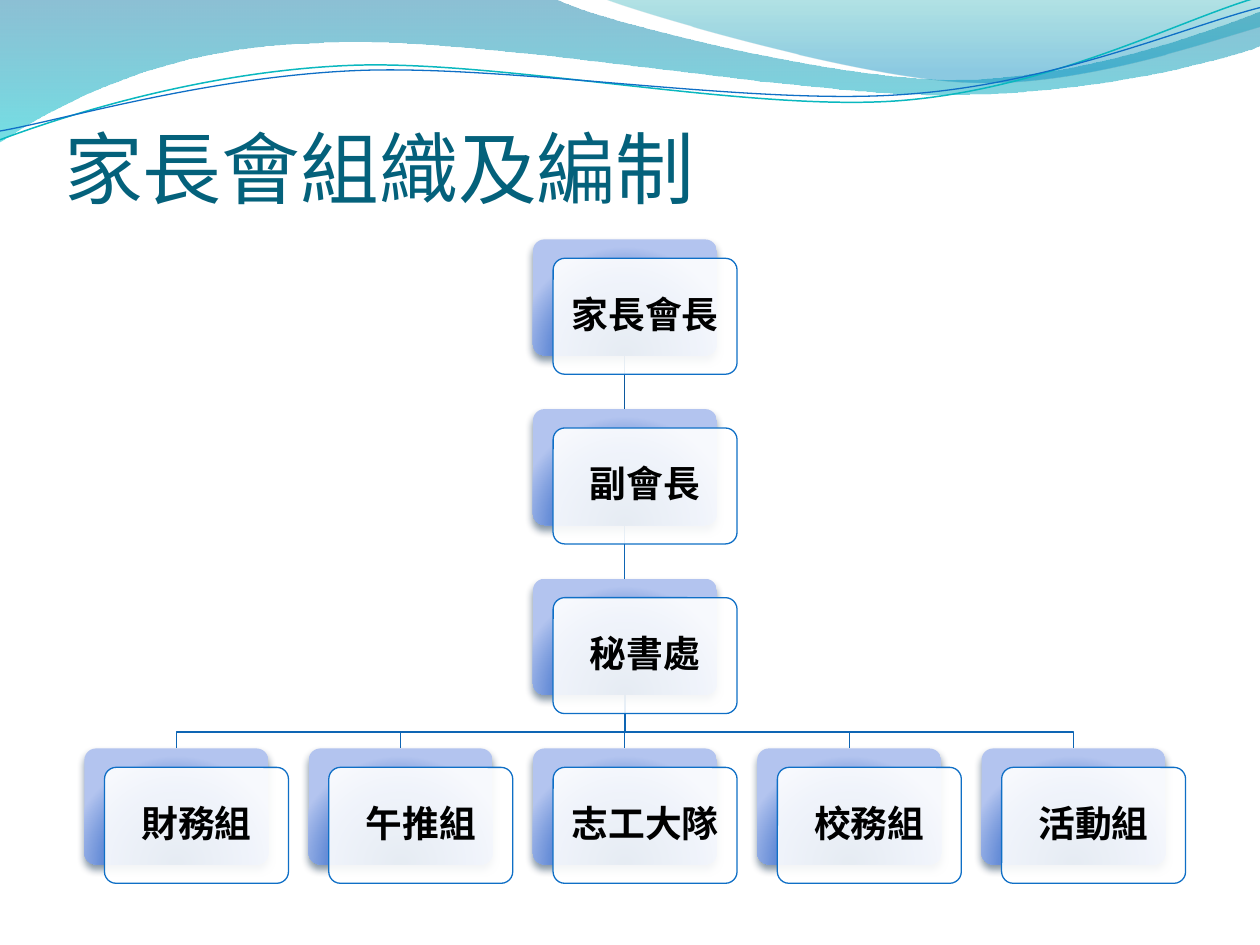
import math

from lxml import etree
from pptx import Presentation, oxml, util as u
from pptx.dml.color import RGBColor
from pptx.enum import shapes, text
from pptx.oxml import ns

HUES = {"title": "04617B", "text": "000000", "white": "FFFFFF", "edge": "0F6FC6",
        "teal": "0AB8BF", "link": "0E65B4", "first": "0C599F", "shade": "042747"}
FONT = "Noto Sans CJK SC"
LINEAR = '<a:lin ang="5400000" scaled="0"/>'
RADIAL = ('<a:path path="circle"><a:fillToRect l="50000" t="130000" '
          'r="50000" b="-30000"/></a:path>')
TILT = 357.3

deck = Presentation()
deck.slide_width, deck.slide_height = u.Inches(10), u.Inches(7.5)
slide = deck.slides.add_slide(deck.slide_layouts[6])
parts = slide.shapes


def draw(box, start, steps, hue=None, width=0.75, turn=0):
    """Draw a freeform in a box; steps hold 2 numbers for a line, 6 for a curve.

    Points are given as seen on the slide, after the turn. No hue means a closed outline.
    """
    left, top, wide, high = box
    path = parts.build_freeform(u.Inches(left), u.Inches(top))
    path.add_line_segments([(u.Inches(left + wide), u.Inches(top + high))], close=False)
    shape = path.convert_to_shape()
    track = shape.element.spPr.find(".//" + ns.qn("a:path"))
    for node in list(track):
        track.remove(node)
    angle = math.radians(-turn)
    cos, sin = math.cos(angle), math.sin(angle)
    for i, step in enumerate([start, *steps]):
        kind = "moveTo" if i == 0 else "lnTo" if len(step) == 2 else "cubicBezTo"
        node = etree.SubElement(track, ns.qn(f"a:{kind}"))
        for x, y in zip(step[::2], step[1::2]):
            dx, dy = x - left - wide / 2, y - top - high / 2
            etree.SubElement(node, ns.qn("a:pt"),
                             x=str(u.Inches(wide / 2 + dx * cos - dy * sin)),
                             y=str(u.Inches(high / 2 + dx * sin + dy * cos)))
    shape.rotation = turn
    shape.shadow.inherit = False
    shape.fill.background()
    if hue:
        shape.line.color.rgb = RGBColor.from_string(HUES[hue])
        shape.line.width = u.Pt(width)
    else:
        etree.SubElement(track, ns.qn("a:close"))
        shape.line.fill.background()
    return shape


def shade(shape, stops, kind):
    """Give a gradient fill; stops are (percent, colour, opacity percent)."""
    shape.fill.gradient()
    old = shape.element.spPr.find(ns.qn("a:gradFill"))
    marks = "".join(
        f'<a:gs pos="{at * 1000}"><a:srgbClr val="{hue}">'
        f'<a:alpha val="{full * 1000}"/></a:srgbClr></a:gs>' for at, hue, full in stops)
    new = oxml.parse_xml(f'<a:gradFill {ns.nsdecls("a")} rotWithShape="1">'
                         f'<a:gsLst>{marks}</a:gsLst>{kind}</a:gradFill>')
    old.getparent().replace(old, new)


# Waves across the top
wave = draw((-0.01, -0.01, 10.02, 1.14), (0, 0), [
    (4.4, -0.01), (4.76, 0.17, 6.64, 0.63, 7.58, 0.63), (8.53, 0.63, 9.58, 0.26, 10, 0.09),
    (10.01, 0.36), (9.83, 0.44, 8.7, 0.76, 7.46, 0.75), (6.22, 0.75, 3.82, 0.28, 2.57, 0.34),
    (1.29, 0.36, 0.46, 0.83, -0.01, 1.13), (0, 0)])
shade(wave, [(0, "0074A1", 45), (100, "00C6CF", 55)], LINEAR)
crest = draw((4.79, -0.01, 5.21, 0.7), (4.79, -0.01), [
    (5.09, 0.11, 6.82, 0.62, 7.69, 0.65), (8.56, 0.69, 9.61, 0.32, 10, 0.21),
    (10, 0), (4.79, -0.01)])
shade(crest, [(0, "00A1A9", 30), (80, "008BBF", 45)], LINEAR)
draw((-0.02, 0.22, 10.02, 0.71), (0, 1.11), [
    (0.48, 0.93, 1.58, 0.57, 2.77, 0.52), (3.95, 0.47, 5.93, 0.89, 7.13, 0.8),
    (8.33, 0.71, 9.38, 0.15, 9.98, -0.02)], hue="teal", width=0.85, turn=TILT)
draw((-0.02, 0.3, 10.03, 0.58), (0, 1.04), [
    (0.47, 0.96, 1.64, 0.61, 2.83, 0.56), (4.03, 0.51, 5.97, 0.84, 7.17, 0.75),
    (8.36, 0.67, 9.41, 0.21, 10, 0.06)], hue="edge", turn=TILT)

# Title
title = parts.add_textbox(u.Inches(0.51), u.Inches(0.99), u.Inches(9), u.Inches(0.71))
title_look = {
    "frame": {"word_wrap": True, "vertical_anchor": text.MSO_ANCHOR.BOTTOM,
              "margin_left": 0, "margin_right": 0,
              "margin_top": u.Inches(0.05), "margin_bottom": 0},
    "para": {"alignment": text.PP_ALIGN.LEFT},
    "font": {"size": u.Pt(45), "name": FONT, "bold": False}, "hue": "title"}
labels = [(title, "家長會組織及編制", title_look)]

# Grid of the chart: three posts above one row of teams
WIDE, HIGH = 1.46, 0.92
LEFTS = [0.67 + 1.78 * col for col in range(5)]
TOPS = [1.9 + 4.04 * row / 3 for row in range(4)]
MID = LEFTS[2] + WIDE / 2
DROP = TOPS[1] - TOPS[0] - HIGH
posts = ["家長會長", "副會長", "秘書處"]
teams = ["財務組", "午推組", "志工大隊", "校務組", "活動組"]
cells = [(name, 2, row) for row, name in enumerate(posts)]
cells += [(name, col, 3) for col, name in enumerate(teams)]

# Links lie behind the cards: bent ones to the teams, upright ones down the middle
foot = TOPS[2] + HIGH
for col in (4, 3, 2, 1, 0):
    x = LEFTS[col] + WIDE / 2
    if col == 2:
        draw((MID - 0.05, foot, 0.1, DROP), (MID, foot), [(MID, TOPS[3])], hue="link")
    else:
        draw((min(x, MID), foot, abs(x - MID), DROP), (MID, foot),
             [(MID, 5.81), (x, 5.81), (x, TOPS[3])], hue="link")
for row, hue in ((1, "link"), (0, "first")):
    foot = TOPS[row] + HIGH
    draw((MID - 0.05, foot, 0.1, DROP), (MID, foot), [(MID, TOPS[row + 1])], hue=hue)

# Each cell is a shaded card with a pale panel on top
panel_look = {
    "frame": {"word_wrap": True, "vertical_anchor": text.MSO_ANCHOR.MIDDLE,
              **{f"margin_{side}": u.Inches(0.09)
                 for side in ("left", "right", "top", "bottom")}},
    "para": {"alignment": text.PP_ALIGN.CENTER, "line_spacing": 0.9},
    "font": {"size": u.Pt(21), "name": FONT, "bold": True}, "hue": "text"}
for name, col, row in cells:
    card, panel = [
        parts.add_shape(shapes.MSO_SHAPE.ROUNDED_RECTANGLE, u.Inches(LEFTS[col] + right),
                        u.Inches(TOPS[row] + down), u.Inches(WIDE), u.Inches(HIGH))
        for right, down in ((0, 0), (0.16, 0.15))]
    for shape in (card, panel):
        shape.adjustments[0] = 0.1
        shape.shadow.inherit = False
    shade(card, [(0, "003D87", 100), (68, "668DD7", 100), (100, "B3C4EF", 100)], RADIAL)
    card.line.fill.background()
    card.element.spPr.find(ns.qn("a:effectLst")).append(oxml.parse_xml(
        f'<a:outerShdw {ns.nsdecls("a")} blurRad="{u.Pt(4.5)}" dist="{u.Pt(3)}" '
        f'dir="5400000" rotWithShape="0"><a:srgbClr val="{HUES["shade"]}">'
        '<a:alpha val="48000"/></a:srgbClr></a:outerShdw>'))
    panel.fill.solid()
    panel.fill.fore_color.rgb = RGBColor.from_string(HUES["white"])
    tint = panel.element.spPr.find(".//" + ns.qn("a:srgbClr"))
    etree.SubElement(tint, ns.qn("a:alpha"), val="90000")
    panel.line.color.rgb = RGBColor.from_string(HUES["edge"])
    panel.line.width = u.Pt(0.75)
    labels.append((panel, name, panel_look))

# Wording
for shape, words, look in labels:
    frame = shape.text_frame
    para = frame.paragraphs[0]
    run = para.add_run()
    run.text = words
    for part, key in ((frame, "frame"), (para, "para"), (run.font, "font")):
        for name, value in look[key].items():
            setattr(part, name, value)
    run.font.color.rgb = RGBColor.from_string(HUES[look["hue"]])
    face = shape.element.find(".//" + ns.qn("a:rPr"))
    etree.SubElement(face, ns.qn("a:ea"), typeface=FONT)

deck.save("out.pptx")
